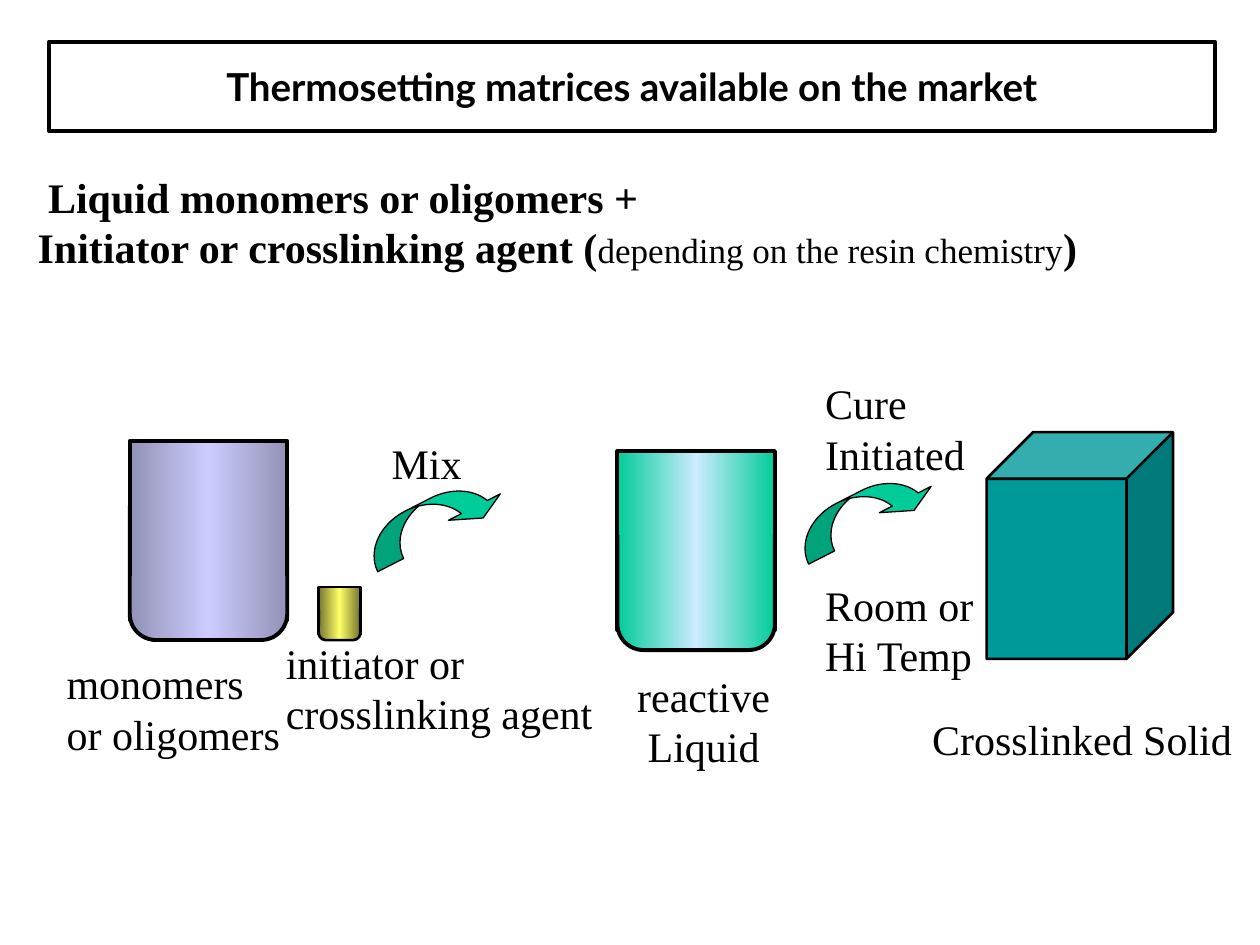
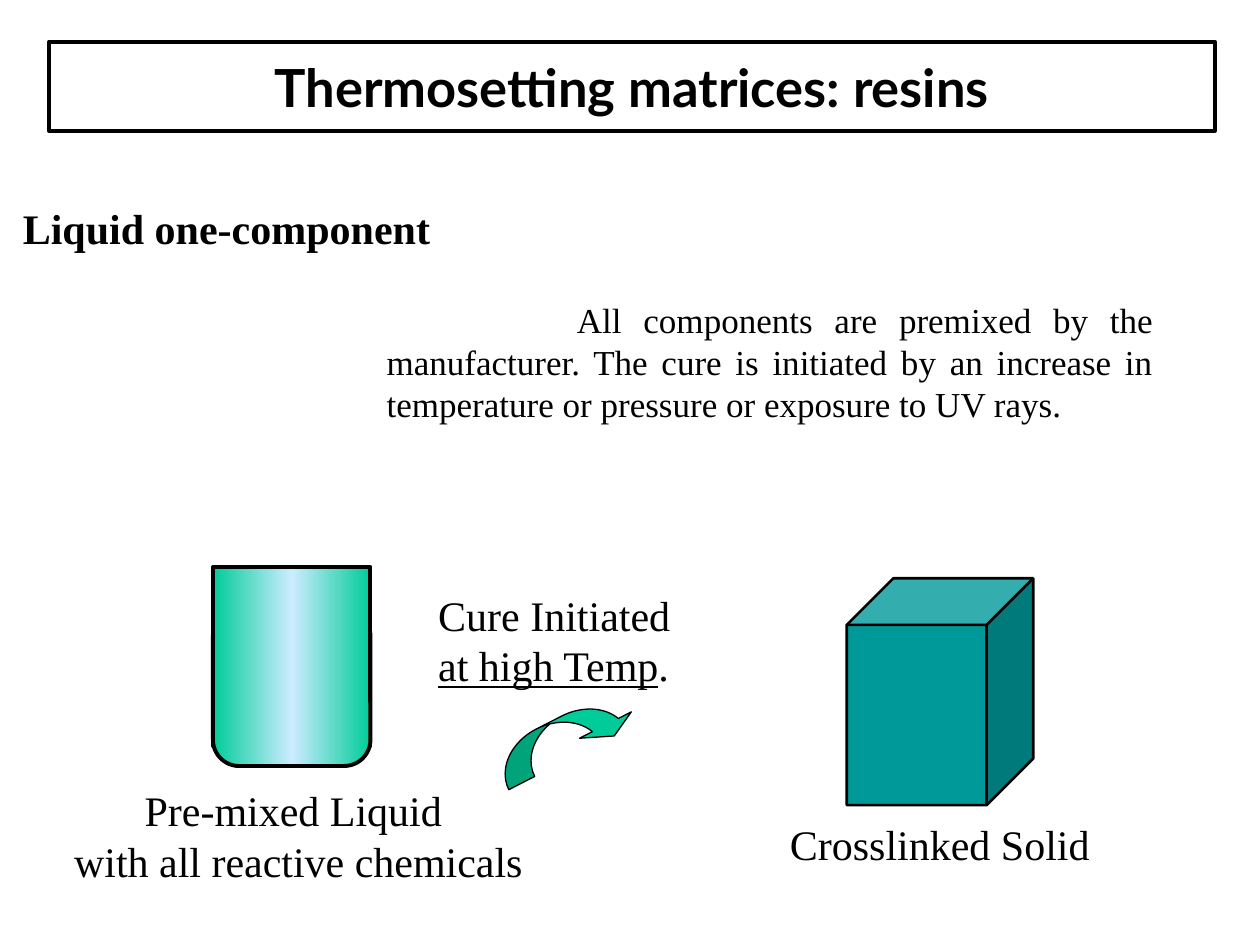
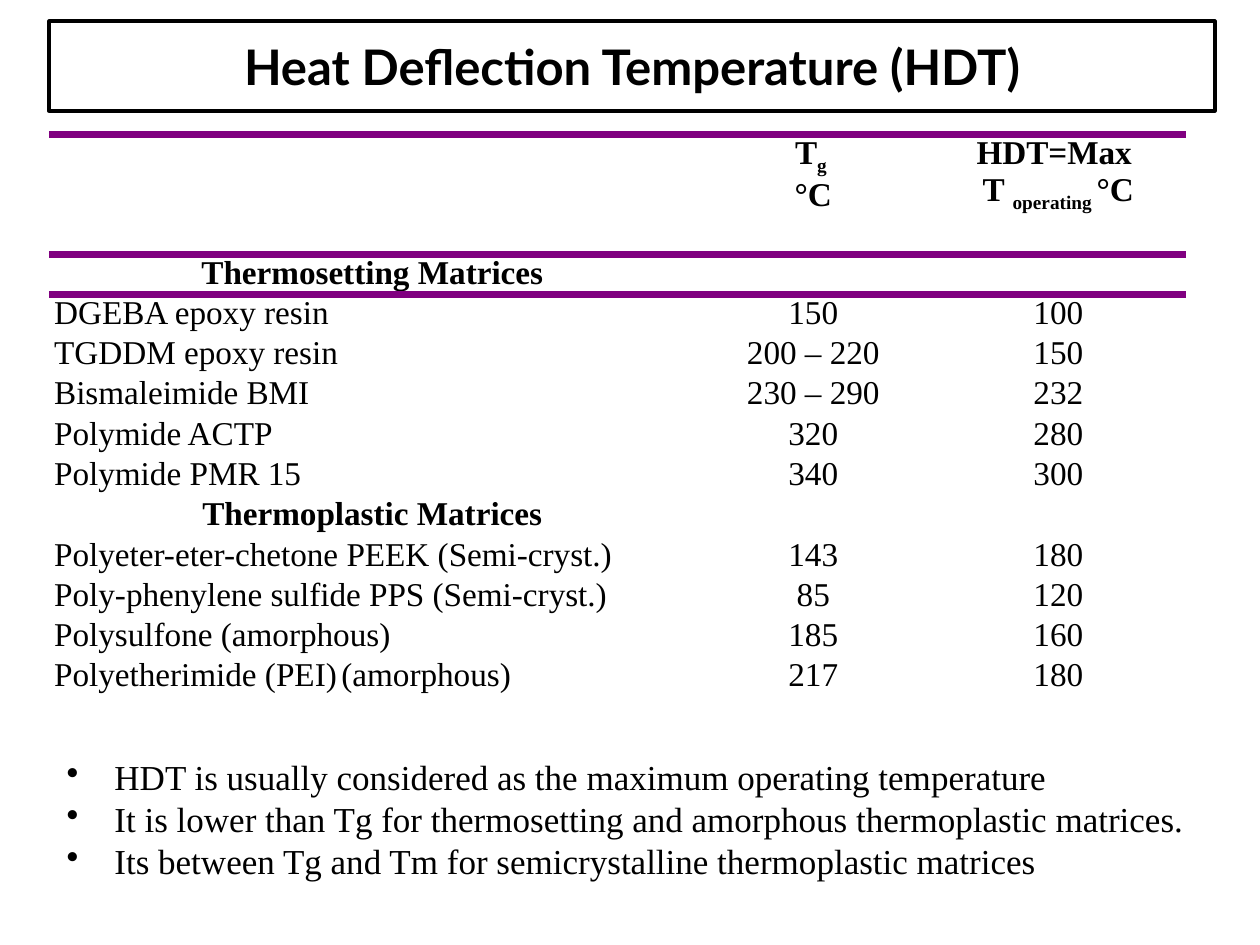
import copy
from dataclasses import dataclass

import pptx
import pptx.dml.color
import pptx.enum.shapes
import pptx.enum.text
import pptx.oxml
import pptx.oxml.ns
import pptx.util
from lxml import etree

Inches = pptx.util.Inches
Pt = pptx.util.Pt
Shape = pptx.enum.shapes.MSO_SHAPE
Align = pptx.enum.text.PP_ALIGN
Rgb = pptx.dml.color.RGBColor.from_string
qn = pptx.oxml.ns.qn


@dataclass(frozen=True)
class Theme:
    title_font: str = "Lato"
    body_font: str = "Times New Roman"
    ink: str = "000000"
    rule: str = "800080"
    arrow: str = "00CC99"
    solid: str = "009999"
    monomer: tuple = ("9292B6", "CCCCFF", "9292B6")
    initiator: tuple = ("76762F", "FFFF66", "76762F")
    reactive: tuple = ("00CC99", "CCECFF", "00CC99")
    body: int = 24
    note: int = 20
    cell: int = 19


theme = Theme()


def write(frame, paragraphs, size=theme.body, align=Align.LEFT, bold=False, font=theme.body_font):
    """Fill a text frame; a paragraph is a string or a list of (text, changes) spans."""
    for index, spans in enumerate(paragraphs):
        para = frame.add_paragraph() if index else frame.paragraphs[0]
        para.alignment = align
        for text, changes in [(spans, {})] if isinstance(spans, str) else spans:
            span = para.add_run()
            span.text = text
            span.font.name = font
            span.font.size = Pt(changes.get("size", size))
            span.font.bold = changes.get("bold", bold)
            span.font.underline = changes.get("underline", False)
            span.font.color.rgb = Rgb(theme.ink)
            if changes.get("subscript"):
                span.font._element.set("baseline", "-25000")


def draw(page, kind, at, fill=None, line=0):
    """Add a preset shape with no fill, a plain fill or a three-stop gradient."""
    shape = page.shapes.add_shape(kind, *map(Inches, at))
    shape.shadow.inherit = False
    if fill is None:
        shape.fill.background()
    elif isinstance(fill, str):
        shape.fill.solid()
        shape.fill.fore_color.rgb = Rgb(fill)
    else:
        shape.fill.gradient()
        shape.fill.gradient_angle = 0
        stop_list = shape._element.spPr.find(".//" + qn("a:gsLst"))
        stop_list.append(copy.deepcopy(stop_list[-1]))
        for stop, color, position in zip(shape.fill.gradient_stops, fill, (0, 0.5, 1)):
            stop.color.rgb = Rgb(color)
            stop.position = position
    if line:
        shape.line.color.rgb = Rgb(theme.ink)
        shape.line.width = Pt(line)
    else:
        shape.line.fill.background()
    return shape


deck = pptx.Presentation()
deck.slide_width, deck.slide_height = Inches(10), Inches(7.5)

# Framed titles: text, top, type size
titles = [
    ("Thermosetting matrices available on the market", 0.33, 22),
    ("Thermosetting matrices: resins", 0.33, 30),
    ("Heat Deflection Temperature (HDT)", 0.17, 28),
]
for text, top, size in titles:
    page = deck.slides.add_slide(deck.slide_layouts[6])
    title = draw(page, Shape.RECTANGLE, (0.39, top, 9.25, 0.71), line=2.25)
    title.text_frame.vertical_anchor = pptx.enum.text.MSO_ANCHOR.MIDDLE
    write(title.text_frame, [text], size, Align.CENTER, True, theme.title_font)
mixing, one_component, deflection = deck.slides

# Vessels: open on top, rounded at the bottom
vessels = [
    (mixing, 1.03, 3.5, 1.25, 1.58, theme.monomer, 2.25),
    (mixing, 2.53, 4.66, 0.33, 0.42, theme.initiator, 1.5),
    (mixing, 4.9, 3.58, 1.25, 1.58, theme.reactive, 2.25),
    (one_component, 1.69, 4.5, 1.25, 1.58, theme.reactive, 2.25),
]
for page, left, top, width, height, colors, line in vessels:
    layers = [
        (Shape.RECTANGLE, 0, 0.9, line),
        (Shape.ROUNDED_RECTANGLE, 0.21, 0.79, line),
        (Shape.RECTANGLE, 0.16, 0.26, 0),
    ]
    for kind, start, share, outline in layers:
        draw(page, kind, (left, top + start * height, width, share * height), colors, outline)
    for side in (left, left + width):
        wall = page.shapes.add_connector(
            pptx.enum.shapes.MSO_CONNECTOR.STRAIGHT,
            Inches(side), Inches(top + 0.1 * height), Inches(side), Inches(top + 0.68 * height))
        wall.line.color.rgb = Rgb(theme.ink)
        wall.line.width = Pt(line)
        etree.SubElement(wall._element.spPr, qn("a:effectLst"))

# Process arrows and cured blocks
for page, left, top in [(mixing, 2.86, 3.96), (mixing, 6.28, 3.9), (one_component, 3.9, 5.69)]:
    arrow = draw(page, Shape.CURVED_DOWN_ARROW, (left, top, 1.17, 0.33), theme.arrow, 0.75)
    arrow.rotation = 333
    for index, value in enumerate((0.7, 1.4, 0.33)):
        arrow.adjustments[index] = value
for page, left, top in [(mixing, 7.83, 3.43), (one_component, 6.72, 4.59)]:
    draw(page, Shape.CUBE, (left, top, 1.48, 1.8), theme.solid, 1.5)

# Headings and labels: page, place, alignment, paragraphs
bold = {"bold": True}
labels = [
    (mixing, (0.2, 1.31, 8.52, 0.91), Align.LEFT, [
        [(" Liquid monomers or oligomers +", bold)],
        [("Initiator or crosslinking agent (", bold),
         ("depending on the resin chemistry", {"size": theme.note}), (")", bold)]]),
    (mixing, (0.43, 5.17, 1.91, 0.91), Align.LEFT, ["monomers", "or oligomers"]),
    (mixing, (2.17, 5.01, 2.67, 0.91), Align.LEFT, ["initiator or", "crosslinking agent"]),
    (mixing, (3.01, 3.42, 0.76, 0.5), Align.LEFT, ["Mix"]),
    (mixing, (6.45, 2.95, 1.39, 0.91), Align.LEFT, ["Cure", "Initiated"]),
    (mixing, (6.45, 4.55, 1.39, 0.91), Align.LEFT, ["Room or", "Hi Temp"]),
    (mixing, (4.95, 5.27, 1.27, 0.91), Align.CENTER, ["reactive", "Liquid"]),
    (mixing, (7.3, 5.61, 2.6, 0.5), Align.LEFT, ["Crosslinked Solid"]),
    (one_component, (0, 1.56, 4.01, 0.51), Align.LEFT, [[(" Liquid one-component", bold)]]),
    (one_component, (3.38, 4.63, 2.04, 0.91), Align.LEFT, [
        "Cure Initiated", [("at high Temp", {"underline": True}), (".", {})]]),
    (one_component, (0.47, 6.18, 3.8, 0.91), Align.CENTER, [
        "Pre-mixed Liquid ", "with all reactive chemicals"]),
    (one_component, (6.17, 6.45, 2.58, 0.5), Align.LEFT, ["Crosslinked Solid"]),
]
for page, at, align, paragraphs in labels:
    box = page.shapes.add_textbox(*map(Inches, at))
    box.text_frame.word_wrap = False
    box.text_frame.auto_size = pptx.enum.text.MSO_AUTO_SIZE.SHAPE_TO_FIT_TEXT
    write(box.text_frame, paragraphs, align=align)

# Justified notes: page, place, left margin, first-line indent, bullet, paragraphs
notes = [
    (one_component, (2.97, 2.32, 6.28, 1.11), 0, 1.51, "", [
        "All components are premixed by the manufacturer. The cure is initiated by an increase in "
        "temperature or pressure or exposure to UV rays."]),
    (deflection, (0.43, 5.95, 9.49, 1.11), 0.38, -0.38, "•", [
        "HDT is usually considered as the maximum operating temperature",
        "It is lower than Tg for thermosetting and amorphous thermoplastic matrices. ",
        "Its between Tg and Tm for semicrystalline thermoplastic matrices"]),
]
for page, at, margin, indent, bullet, paragraphs in notes:
    box = page.shapes.add_textbox(*map(Inches, at))
    box.text_frame.word_wrap = True
    write(box.text_frame, paragraphs, theme.note, Align.JUSTIFY)
    for para in box.text_frame.paragraphs:
        properties = para._p.get_or_add_pPr()
        properties.set("marL", str(Inches(margin)))
        properties.set("indent", str(Inches(indent)))
        if bullet:
            etree.SubElement(properties, qn("a:buChar"), char=bullet)

# Temperature table
subscript = {"subscript": True}
rows = [
    ([], [[("T", {}), ("g ", subscript)], "°C"],
     ["HDT=Max ", [("T ", {}), ("operating ", subscript), ("°C", {})]]),
    (["Thermosetting Matrices"], [], []),
    (["DGEBA epoxy resin"], ["150"], ["100"]),
    (["TGDDM epoxy resin"], ["200 – 220"], ["150"]),
    (["Bismaleimide BMI"], ["230 – 290"], ["232"]),
    (["Polymide ACTP"], ["320"], ["280"]),
    (["Polymide PMR 15"], ["340"], ["300"]),
    (["Thermoplastic Matrices"], [], []),
    (["Polyeter-eter-chetone PEEK (Semi-cryst.)"], ["143"], ["180"]),
    (["Poly-phenylene sulfide PPS (Semi-cryst.)"], ["85"], ["120"]),
    (["Polysulfone (amorphous)"], ["185"], ["160"]),
    ([[("Polyetherimide (PEI)", {}), (" ", {"size": 10}), ("(amorphous)", {})]], ["217"], ["180"]),
]
heading_rows = (0, 1, 7)
ruled_sides = {0: ("a:lnT", "a:lnB"), 1: ("a:lnT",)}
table = deflection.shapes.add_table(
    len(rows), 3, Inches(0.39), Inches(1.07), Inches(9.02), Inches(4.47)).table
table.first_row = table.horz_banding = False
no_grid_style = "{2D5ABB26-0587-4C30-8999-92F81FD0307C}"
table._tbl.tblPr.find(qn("a:tableStyleId")).text = no_grid_style
for column, width in zip(table.columns, (5.13, 1.87, 2.02)):
    column.width = Inches(width)
for row_index, row in enumerate(rows):
    table.rows[row_index].height = Inches(0.32 if row_index else 0.95)
    heading = row_index in heading_rows
    for column_index, paragraphs in enumerate(row):
        cell = table.cell(row_index, column_index)
        cell.margin_left = cell.margin_right = Inches(0.04)
        cell.margin_top = cell.margin_bottom = 0
        cell.fill.background()
        align = Align.CENTER if heading or column_index else Align.LEFT
        write(cell.text_frame, paragraphs, theme.cell, align, heading)
        for position, side in enumerate(ruled_sides.get(row_index, ())):
            border = etree.Element(qn(side), w=str(Pt(4.5)))
            paint = etree.SubElement(border, qn("a:solidFill"))
            etree.SubElement(paint, qn("a:srgbClr"), val=theme.rule)
            cell._tc.get_or_add_tcPr().insert(position, border)

deck.save("out.pptx")
